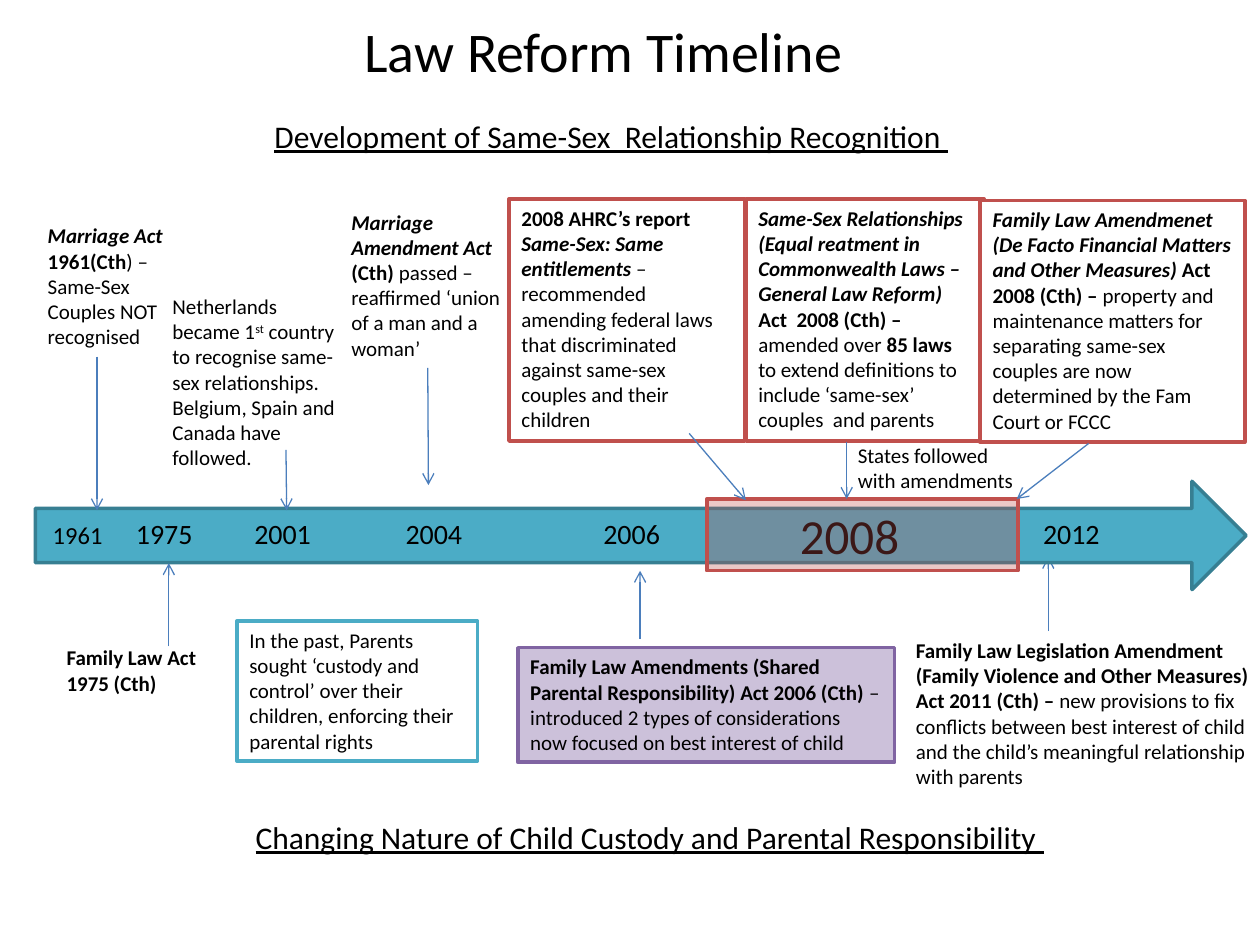
from dataclasses import dataclass

from lxml.etree import SubElement
from pptx import Presentation
from pptx.dml.color import RGBColor
from pptx.enum.shapes import MSO_CONNECTOR as Connector, MSO_SHAPE as Preset
from pptx.enum.text import MSO_ANCHOR as Anchor, MSO_AUTO_SIZE as AutoSize, PP_ALIGN as Align
from pptx.oxml.ns import qn
from pptx.util import Inches, Pt


@dataclass(frozen=True)
class Theme:
    font: str = "Calibri"
    ink: str = "000000"
    paper: str = "FFFFFF"
    red: str = "C0504D"
    teal: str = "4BACC6"
    teal_dark: str = "377F92"
    purple: str = "8064A2"
    lilac: str = "CCC1DA"
    arrow: str = "4B7EBC"
    title: int = 32
    heading: int = 18
    body: int = 12
    border: float = 2
    arrow_width: float = 0.75
    highlight_alpha: int = 31


THEME = Theme()
COLUMNS, ROWS = 100, 75
WIDTH, HEIGHT = Inches(10), Inches(7.5)

TITLE = ("Law Reform Timeline", (22.7, 0, 50.4, 7.9))
HEADINGS = [
    ("Development of Same-Sex  Relationship Recognition ", (20.8, 8.8, 55.8, 4)),
    ("Changing Nature of Child Custody and Parental Responsibility ", (19.3, 64.4, 68.1, 4)),
]
NOTES = {
    "marriage": ((2.8, 17.2, 14.2, 11.1), [
        ("Marriage Act ", "bi"), ("1961(Cth", "b"),
        (") – Same-Sex Couples NOT recognised", "")]),
    "family": ((4.3, 50.7, 12.6, 5), [("Family Law Act 1975 (Cth)", "b")]),
    "netherlands": ((12.7, 22.8, 15.2, 15.1), [
        ("Netherlands became 1", ""), ("st", "^"),
        (" country to recognise same-sex relationships. "
         "Belgium, Spain and Canada have followed.", "")]),
    "amendment": ((26.9, 16.1, 14.1, 13.1), [
        ("Marriage Amendment Act ", "bi"), ("(Cth) ", "b"),
        ("passed – reaffirmed ‘union of a man and a woman’", "")]),
    "states": ((67.1, 34.6, 15.7, 5), [("States followed with amendments", "")]),
    "violence": ((71.7, 50.1, 29.5, 13.1), [
        ("Family Law Legislation Amendment (Family Violence and Other Measures) "
         "Act 2011 (Cth) – ", "b"),
        ("new provisions to fix conflicts between best interest of child and "
         "the child’s meaningful relationship with parents", "")]),
}
BOXES = [
    ((40.4, 15.8, 18.7, 19.2), THEME.paper, THEME.red, [
        ("2008 AHRC’s report ", "b"), ("Same-Sex: Same entitlements ", "bi"),
        ("– recommended amending federal laws that discriminated against "
         "same-sex couples and their children", "")]),
    ((59.2, 15.8, 18.9, 19.2), THEME.paper, THEME.red, [
        ("Same-Sex Relationships (Equal reatment in Commonwealth Laws – "
         "General Law Reform) ", "bi"),
        ("Act  2008 (Cth) –", "b"), (" amended over ", ""), ("85 laws ", "b"),
        ("to extend definitions to include ‘same-sex’ couples  and parents", "")]),
    ((77.8, 15.9, 21, 19.2), THEME.paper, THEME.red, [
        ("Family Law Amendmenet (De Facto Financial Matters and Other Measures) ", "bi"),
        ("Act 2008 (Cth) – ", "b"),
        ("property and maintenance matters for separating same-sex couples "
         "are now determined by the Fam Court or FCCC", "")]),
    ((41.1, 51.4, 29.9, 9.1), THEME.lilac, THEME.purple, [
        ("Family Law Amendments (Shared Parental Responsibility) Act 2006 (Cth) ", "b"),
        ("– introduced 2 types of considerations now focused on best interest of child", "")]),
    ((18.8, 49.3, 19.1, 11.1), THEME.paper, THEME.teal, [
        ("In the past, Parents sought ‘custody and control’ over their children, "
         "enforcing their parental rights", "")]),
]
BAND = (2.8, 38.2, 96.1, 8.6)
HIGHLIGHT = (56.1, 39.6, 24.7, 5.7)
YEARS = [
    ("1961", 14, (3.2, 40.8, 7.9, 3.4)),
    ("1975", 16, (9.8, 40.5, 7.1, 3.7)),
    ("2001", 16, (19.2, 40.5, 7.1, 3.7)),
    ("2004", 16, (31.2, 40.5, 7.1, 3.7)),
    ("2006", 16, (46.9, 40.5, 7.9, 3.7)),
    ("2008", 28, (62.5, 39.6, 11.8, 5.7)),
    ("2012", 16, (81.8, 40.5, 7.1, 3.7)),
]
ARROW_BEHIND_BAND = ((83.2, 50.1), (83.2, 44.2))
ARROWS = [
    ((7.7, 28.3), (7.7, 40.5)),
    ((13.4, 51.3), (13.4, 44.7)),
    ((54.7, 34.4), (59.2, 39.7)),
    ((67.2, 35.1), (67.2, 39.6)),
    ((86.4, 35.2), (80.7, 39.6)),
    ((50.8, 50.7), (50.8, 45.3)),
]
ARROW_TO_2001 = ((22.7, 35.7), (22.7, 40.5))
ARROW_TO_2004 = ((34, 29.2), (34, 38.5))


def across(columns):
    return round(WIDTH * columns / COLUMNS)


def down(rows):
    return round(HEIGHT * rows / ROWS)


def place(area):
    left, top, width, height = area
    return across(left), down(top), across(width), down(height)


def color(value):
    return RGBColor.from_string(value)


def write(shape, runs, size, align=Align.LEFT, anchor=Anchor.TOP, underline=False):
    frame = shape.text_frame
    frame.word_wrap = True
    frame.auto_size = AutoSize.NONE if anchor == Anchor.MIDDLE else AutoSize.SHAPE_TO_FIT_TEXT
    frame.vertical_anchor = anchor
    paragraph = frame.paragraphs[0]
    paragraph.alignment = align
    for text, style in runs:
        run = paragraph.add_run()
        run.text = text
        font = run.font
        font.name, font.size = THEME.font, Pt(size)
        font.color.rgb = color(THEME.ink)
        font.bold, font.italic = "b" in style, "i" in style
        font.underline = underline
        if "^" in style:
            run.font._element.set("baseline", "30000")


def add_text(slide, area, runs, size, **options):
    shape = slide.shapes.add_textbox(*place(area))
    write(shape, runs, size, **options)
    return shape


def add_block(slide, preset, area, fill, line):
    shape = slide.shapes.add_shape(preset, *place(area))
    shape.shadow.inherit = False
    shape.fill.solid()
    shape.fill.fore_color.rgb = color(fill)
    shape.line.color.rgb = color(line)
    shape.line.width = Pt(THEME.border)
    return shape


def add_arrow(slide, start, end):
    connector = slide.shapes.add_connector(
        Connector.STRAIGHT, across(start[0]), down(start[1]), across(end[0]), down(end[1]))
    connector.line.color.rgb = color(THEME.arrow)
    connector.line.width = Pt(THEME.arrow_width)
    properties = connector._element.spPr
    SubElement(properties.find(qn("a:ln")), qn("a:tailEnd"), type="arrow")
    SubElement(properties, qn("a:effectLst"))
    return connector


def main():
    presentation = Presentation()
    presentation.slide_width, presentation.slide_height = WIDTH, HEIGHT
    slide = presentation.slides.add_slide(presentation.slide_layouts[6])

    text, area = TITLE
    add_text(slide, area, [(text, "")], THEME.title, align=Align.CENTER, anchor=Anchor.MIDDLE)
    for text, area in HEADINGS:
        add_text(slide, area, [(text, "")], THEME.heading, underline=True)
    for area, fill, line, runs in BOXES:
        write(add_block(slide, Preset.RECTANGLE, area, fill, line), runs, THEME.body)
    notes = {name: add_text(slide, area, runs, THEME.body)
             for name, (area, runs) in NOTES.items()}

    add_arrow(slide, *ARROW_BEHIND_BAND)
    add_block(slide, Preset.RIGHT_ARROW, BAND, THEME.teal, THEME.teal_dark)
    years = {year: add_text(slide, area, [(year, "")], size) for year, size, area in YEARS}
    highlight = add_block(slide, Preset.RECTANGLE, HIGHLIGHT, THEME.red, THEME.red)
    tint = highlight._element.spPr.find(qn("a:solidFill"))[0]
    SubElement(tint, qn("a:alpha"), val=str(THEME.highlight_alpha * 1000))

    for start, end in ARROWS:
        add_arrow(slide, start, end)
    add_arrow(slide, *ARROW_TO_2001).end_connect(years["2001"], 0)
    add_arrow(slide, *ARROW_TO_2004).begin_connect(notes["amendment"], 2)
    presentation.save("out.pptx")


if __name__ == "__main__":
    main()
